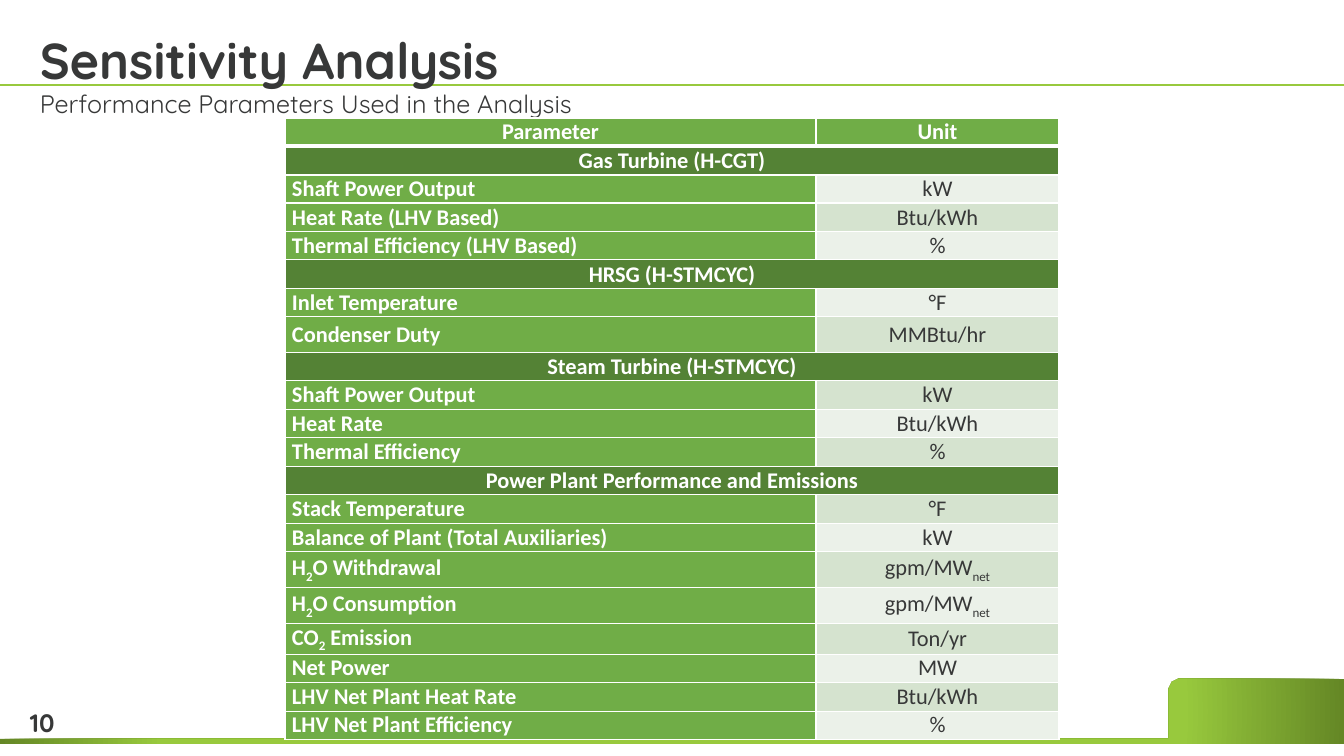
from math import cos, pi, sin

from lxml.etree import SubElement
from pptx import Presentation
from pptx.dml.color import RGBColor as RGB
from pptx.enum.shapes import MSO_CONNECTOR as LINE
from pptx.enum.text import MSO_ANCHOR as ANCHOR, MSO_AUTO_SIZE as AUTO, PP_ALIGN as ALIGN
from pptx.oxml.ns import qn
from pptx.util import Pt

PX = 914400 / 100.8
COLORS = {
    "lime": "98C93D", "olive": "648725", "ink": "373838", "white": "FFFFFF",
    "green": "70AD47", "forest": "548235", "pale": "EBF1E9", "sage": "D5E3CF",
}


def px(*lengths):
    return [round(length * PX) for length in lengths]


def write(para, text, color, **formats):
    for index, piece in enumerate(text.split("_")):
        span = para.add_run()
        span.text = piece
        for name, value in formats.items():
            setattr(span.font, name, value)
        span.font.color.rgb = RGB.from_string(COLORS[color])
        if index % 2:
            span.font._element.set("baseline", "-25000")


deck = Presentation()
deck.slide_width, deck.slide_height = px(1344, 756)
page = deck.slides.add_slide(deck.slide_layouts[6])

title_rule = page.shapes.add_connector(LINE.STRAIGHT, *px(0, 85, 1344, 85))
title_rule.line.color.rgb = RGB.from_string(COLORS["lime"])
title_rule.line.width = Pt(2)
SubElement(title_rule.element.spPr, qn("a:effectLst"))

corner = [
    (1180 - 11 * sin(step * pi / 16), 690 - 11 * cos(step * pi / 16))
    for step in range(9)
]
outline = page.shapes.build_freeform(1344, 679, scale=PX)
outline.add_line_segments(corner + [(1169, 739), (0, 739), (0, 744), (1344, 744)])
footer = outline.convert_to_shape()
footer.shadow.inherit = False
footer.line.fill.background()
footer.fill.gradient()
for stop, color, position in zip(footer.fill.gradient_stops, ("lime", "olive"), (0.76, 1)):
    stop.color.rgb = RGB.from_string(COLORS[color])
    stop.position = position
gradient = footer.element.spPr.find(qn("a:gradFill"))
gradient.remove(gradient.find(qn("a:lin")))
radial = SubElement(gradient, qn("a:path"), path="circle")
SubElement(radial, qn("a:fillToRect"), l="50000", t="50000", r="50000", b="50000")

TEXTS = [
    ("10", (20, 702, 48, 40), 18, True, 1.0,
     {"word_wrap": False, "auto_size": AUTO.SHAPE_TO_FIT_TEXT}),
    ("Sensitivity Analysis", (30, 28, 1277, 67), 36, True, 0.9,
     {"word_wrap": True, "vertical_anchor": ANCHOR.BOTTOM}),
    ("Performance Parameters Used in the Analysis", (30, 87, 1277, 41), 18, False, 0.9,
     {"word_wrap": True, "vertical_anchor": ANCHOR.TOP}),
]
for text, place, size, bold, spacing, frame_formats in TEXTS:
    box = page.shapes.add_textbox(*px(*place))
    for name, value in frame_formats.items():
        setattr(box.text_frame, name, value)
    para = box.text_frame.paragraphs[0]
    para.line_spacing = spacing
    write(para, text, "ink", name="Quicksand", size=Pt(size), bold=bold)

ROWS = [
    ("Parameter", "Unit"),
    ("Gas Turbine (H-CGT)",),
    ("Shaft Power Output", "kW"),
    ("Heat Rate (LHV Based)", "Btu/kWh"),
    ("Thermal Efficiency (LHV Based)", "%"),
    ("HRSG (H-STMCYC)",),
    ("Inlet Temperature", "°F"),
    ("Condenser Duty", "MMBtu/hr"),
    ("Steam Turbine (H-STMCYC)",),
    ("Shaft Power Output", "kW"),
    ("Heat Rate", "Btu/kWh"),
    ("Thermal Efficiency", "%"),
    ("Power Plant Performance and Emissions",),
    ("Stack Temperature", "°F"),
    ("Balance of Plant (Total Auxiliaries)", "kW"),
    ("H_2_O Withdrawal", "gpm/MW_net"),
    ("H_2_O Consumption", "gpm/MW_net"),
    ("CO_2_ Emission", "Ton/yr"),
    ("Net Power", "MW"),
    ("LHV Net Plant Heat Rate", "Btu/kWh"),
    ("LHV Net Plant Efficiency", "%"),
]
TALL_ROWS = (7, 15, 16)
CELL_FORMATS = {"vertical_anchor": ANCHOR.MIDDLE}
CELL_FORMATS |= dict(zip(("margin_left", "margin_top", "margin_right", "margin_bottom"), px(7, 0, 7, 0)))

table = page.shapes.add_table(len(ROWS), 2, *px(285, 118, 774, 620)).table
table.horz_banding = False
for column, width in zip(table.columns, px(531, 243)):
    column.width = width
for row, texts in enumerate(ROWS):
    table.rows[row].height = px(36 if row in TALL_ROWS else 28 + row % 2)[0]
    is_section = len(texts) == 1
    for column in range(2):
        cell = table.cell(row, column)
        for name, value in CELL_FORMATS.items():
            setattr(cell, name, value)
        for side in ("lnL", "lnR", "lnT", "lnB"):
            heavy = (row, side) in ((0, "lnB"), (1, "lnT"))
            border = SubElement(cell._tc.get_or_add_tcPr(), qn(f"a:{side}"), w=str(Pt(3 if heavy else 1)))
            SubElement(SubElement(border, qn("a:solidFill")), qn("a:srgbClr"), val=COLORS["white"])
        is_unit = column == 1 and row > 0 and not is_section
        fill = "forest" if is_section else ("pale", "sage")[row % 2] if is_unit else "green"
        cell.fill.solid()
        cell.fill.fore_color.rgb = RGB.from_string(COLORS[fill])
        if column < len(texts):
            para = cell.text_frame.paragraphs[0]
            para.alignment = ALIGN.CENTER if column or row == 0 or is_section else ALIGN.LEFT
            write(para, texts[column], "ink" if is_unit else "white",
                  name="Calibri", size=Pt(16), bold=not is_unit)
    if is_section:
        table.cell(row, 0).merge(table.cell(row, 1))

deck.save("out.pptx")
